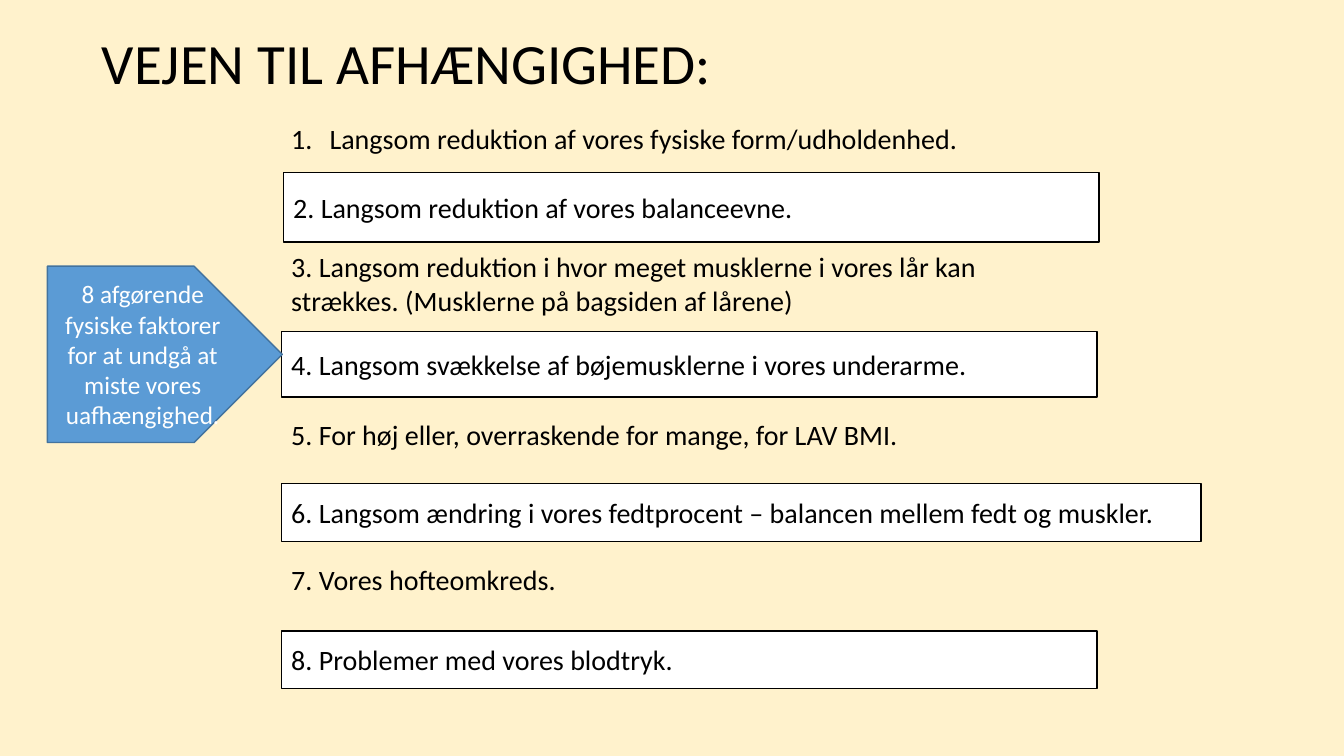
from lxml import etree
from pptx import Presentation
from pptx.dml.color import RGBColor
from pptx.enum.shapes import MSO_SHAPE as SHAPE
from pptx.enum.text import MSO_ANCHOR as ANCHOR, MSO_AUTO_SIZE as AUTO, PP_ALIGN as ALIGN
from pptx.oxml.ns import qn
from pptx.util import Inches, Pt

CREAM, WHITE, BLACK = "FFF2CC", "FFFFFF", "000000"
BLUE, DARK_BLUE = "5B9BD5", "43739E"


def color(value):
    return RGBColor.from_string(value)


class SlideBuilder:
    font = "Calibri"

    def __init__(self, prs):
        self.s = prs.slides.add_slide(prs.slide_layouts[5])
        fill = self.s.background.fill
        fill.solid()
        fill.fore_color.rgb = color(CREAM)

    def set_text(self, sp, text, size, ink=BLACK, align=ALIGN.LEFT):
        tf = sp.text_frame
        tf.word_wrap = True
        tf.auto_size = AUTO.NONE
        tf.vertical_anchor = ANCHOR.MIDDLE
        p = tf.paragraphs[0]
        p.text = text
        p.alignment = align
        p.font.name = self.font
        p.font.size = Pt(size)
        p.font.color.rgb = color(ink)
        return p

    def title(self, text, box):
        sp = self.s.shapes.title
        sp.left, sp.top, sp.width, sp.height = map(Inches, box)
        self.set_text(sp, text, 40.7).line_spacing = 0.7

    def text(self, text, box):
        sp = self.s.shapes.add_textbox(*map(Inches, box))
        return self.set_text(sp, text, 20)

    def numbered(self, text, box):
        pPr = self.text(text, box)._p.get_or_add_pPr()
        pPr.set("marL", str(Inches(0.38)))
        pPr.set("indent", str(-Inches(0.38)))
        bullet = etree.Element(qn("a:buAutoNum"), type="arabicPeriod")
        pPr.find(qn("a:defRPr")).addprevious(bullet)

    def shape(self, kind, text, box, fill, line, size=20, ink=BLACK, align=ALIGN.LEFT):
        sp = self.s.shapes.add_shape(kind, *map(Inches, box))
        sp.shadow.inherit = False
        sp.fill.solid()
        sp.fill.fore_color.rgb = color(fill)
        sp.line.color.rgb = color(line)
        sp.line.width = Pt(1)
        self.set_text(sp, text, size, ink, align)

    def framed(self, text, box):
        self.shape(SHAPE.RECTANGLE, text, box, WHITE, BLACK)


def main():
    prs = Presentation()
    prs.slide_width, prs.slide_height = Inches(13.33), Inches(7.5)
    slide = SlideBuilder(prs)

    # Title
    slide.title("VEJEN TIL AFHÆNGIGHED:", (0.91, 0.4, 11.5, 0.59))

    # Eight factors: every second one is framed
    left, width = 2.79, 8.09
    factors = [
        (slide.numbered, "Langsom reduktion af vores fysiske form/udholdenhed.",
         (left, 0.97, width, 0.8)),
        (slide.framed, "2. Langsom reduktion af vores balanceevne.",
         (2.81, 1.71, width, 0.69)),
        (slide.text, "3. Langsom reduktion i hvor meget musklerne i vores lår kan "
         "strækkes. (Musklerne på bagsiden af lårene)", (left, 2.35, width, 0.92)),
        (slide.framed, "4. Langsom svækkelse af bøjemusklerne i vores underarme.",
         (left, 3.29, width, 0.65)),
        (slide.text, "5. For høj eller, overraskende for mange, for LAV BMI.",
         (left, 4.03, width, 0.56)),
        (slide.framed, "6. Langsom ændring i vores fedtprocent – balancen mellem fedt og muskler.",
         (left, 4.8, 9.12, 0.57)),
        (slide.text, "7. Vores hofteomkreds.", (left, 5.46, width, 0.57)),
        (slide.framed, "8. Problemer med vores blodtryk.", (left, 6.26, width, 0.57)),
    ]
    for add, text, box in factors:
        add(text, box)

    # Arrow pointing at the factors
    slide.shape(SHAPE.PENTAGON,
                "8 afgørende fysiske faktorer for at undgå at miste vores uafhængighed.",
                (0.47, 2.64, 2.33, 1.75), BLUE, DARK_BLUE, 18, WHITE, ALIGN.CENTER)

    prs.save("out.pptx")


if __name__ == "__main__":
    main()
